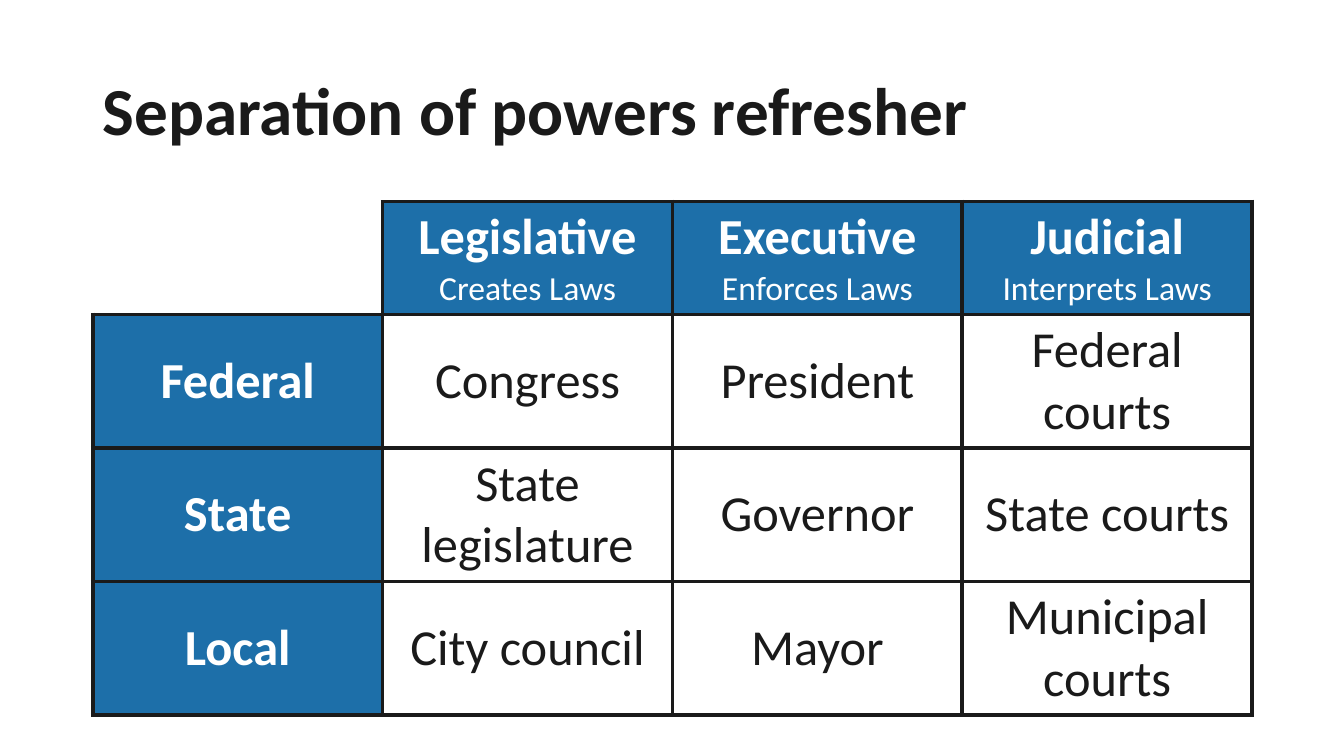
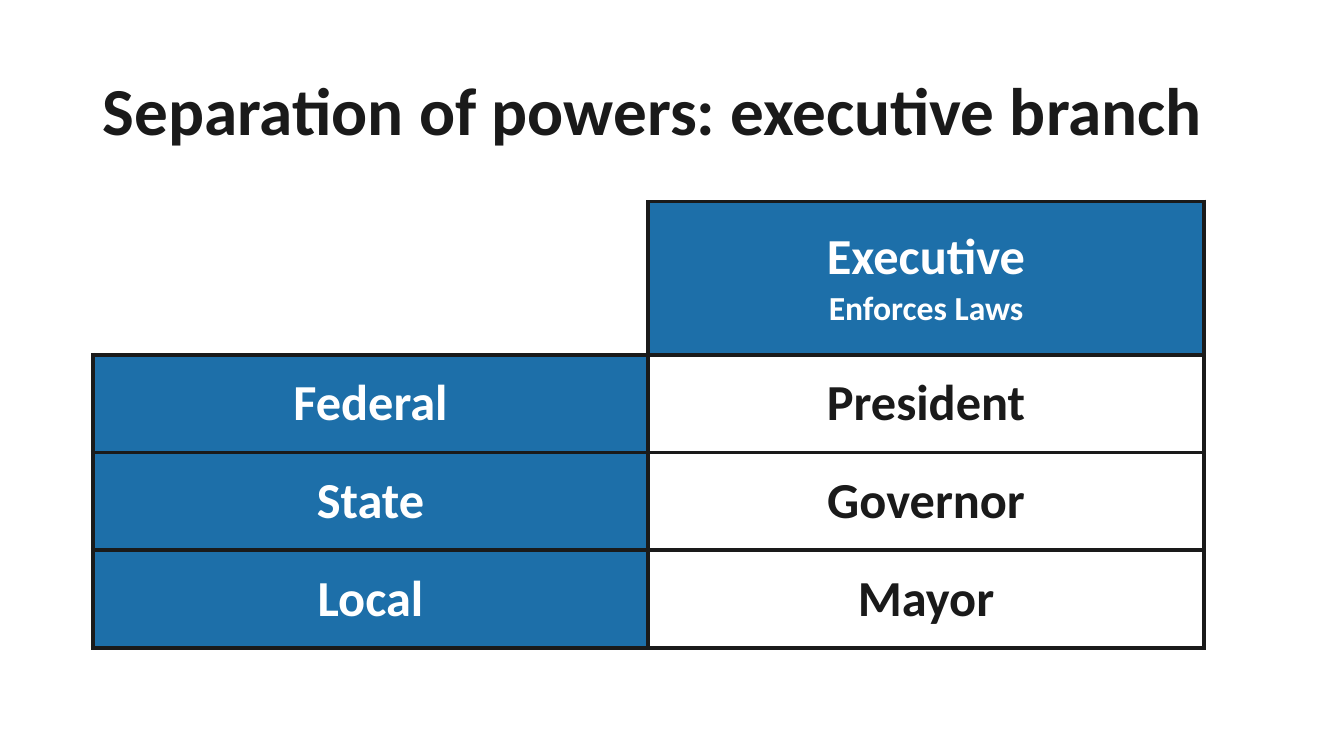
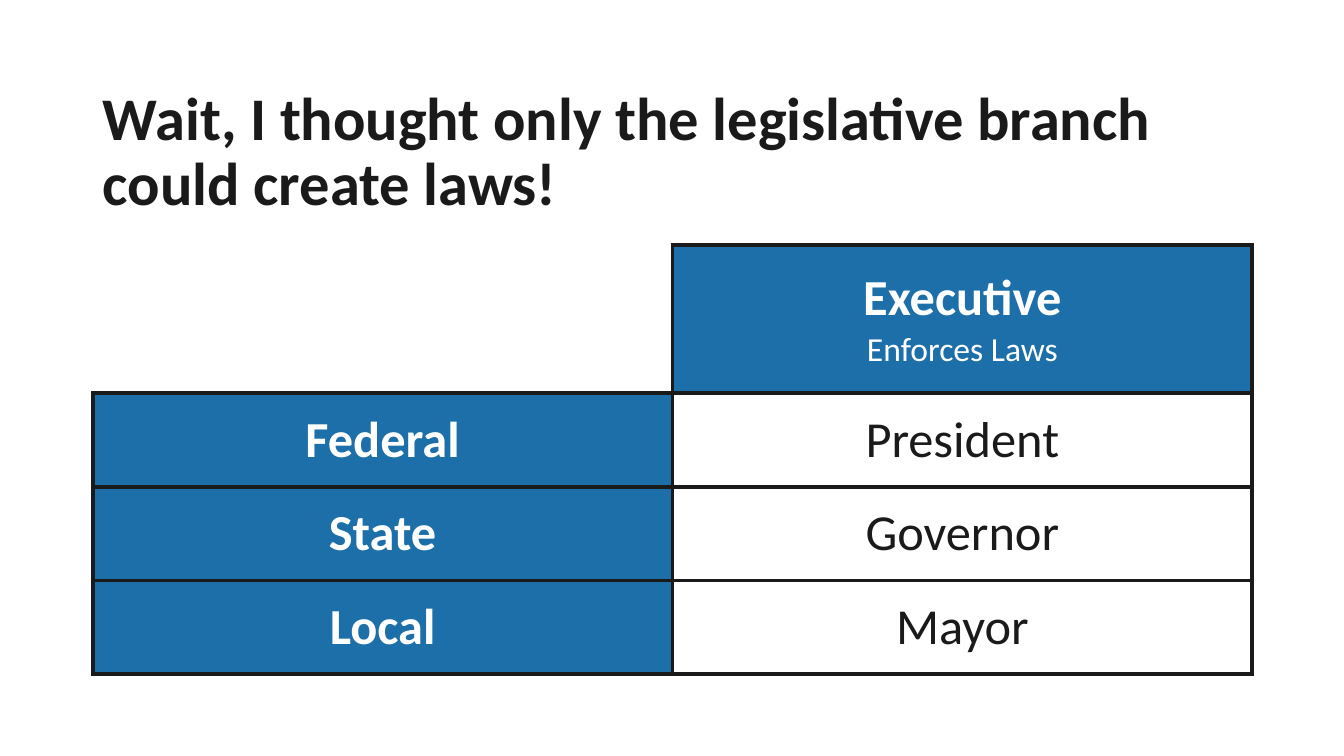
"""Build three slides on the separation of powers, each a title over a table."""
from dataclasses import dataclass

from lxml import etree
from pptx import Presentation
from pptx.dml.color import RGBColor
from pptx.enum.text import MSO_ANCHOR, MSO_AUTO_SIZE, PP_ALIGN
from pptx.oxml.ns import qn
from pptx.util import Inches, Pt

LEFT, CENTER = PP_ALIGN.LEFT, PP_ALIGN.CENTER
MIDDLE = MSO_ANCHOR.MIDDLE
FIXED = MSO_AUTO_SIZE.NONE

FONT = "Calibri"
INK, BLUE, WHITE = "1A1A1A", "1D6FA9", "FFFFFF"
EDGE = 0.92
SPAN = 11.5
HEAD_SIZE, SUB_SIZE = 36, 24
TITLE_ONLY = 5


@dataclass
class Page:
    title: str
    rows: list[list[str]]
    notes: list[str]
    size: float = 48
    title_top: float = 0.4
    top: float = 2
    width: float = SPAN
    head: float = 1.5
    row: float = 1
    bold_sub: bool = False
    bold_cell: bool = False


BRANCH = [
    ["", "Executive"],
    ["Federal", "President"],
    ["State", "Governor"],
    ["Local", "Mayor"],
]

PAGES = [
    Page(
        "Separation of powers refresher",
        [
            ["", "Legislative", "Executive", "Judicial"],
            ["Federal", "Congress", "President", "Federal courts"],
            ["State", "State legislature", "Governor", "State courts"],
            ["Local", "City council", "Mayor", "Municipal courts"],
        ],
        ["", "Creates Laws", "Enforces Laws", "Interprets Laws"],
        head=1.12, row=1.32,
    ),
    Page(
        "Separation of powers: executive branch", BRANCH, ["", "Enforces Laws"],
        width=11.02, head=1.52, row=0.97, bold_sub=True, bold_cell=True,
    ),
    Page(
        "Wait, I thought only the legislative branch could create laws!",
        BRANCH, ["", "Enforces Laws"],
        size=43.2, title_top=0.8, top=2.43, head=1.47, row=0.93,
    ),
]


def color(code: str) -> RGBColor:
    return RGBColor.from_string(code)


def add_run(para, text: str, size: float, ink: str, bold: bool) -> None:
    run = para.add_run()
    run.text = text
    font = run.font
    font.name, font.size, font.bold = FONT, Pt(size), bold
    font.color.rgb = color(ink)


def add_edge(cell, side: str, code: str, width: float) -> None:
    props = cell._tc.get_or_add_tcPr()
    line = etree.SubElement(props, qn(f"a:ln{side}"), w=str(Pt(width)))
    fill = etree.SubElement(line, qn("a:solidFill"))
    etree.SubElement(fill, qn("a:srgbClr"), val=code)


def style_cell(cell, fill: str, bare: bool) -> None:
    for side in "LRTB":
        if bare and side in "LT":
            add_edge(cell, side, WHITE, 1)
        else:
            add_edge(cell, side, INK, 3)
    cell.fill.solid()
    cell.fill.fore_color.rgb = color(fill)
    cell.vertical_anchor = MIDDLE


def add_title(slide, page: Page) -> None:
    title = slide.shapes.title
    title.left, title.top = Inches(EDGE), Inches(page.title_top)
    title.width, title.height = Inches(SPAN), Inches(1.45)
    frame = title.text_frame
    frame.auto_size, frame.vertical_anchor = FIXED, MIDDLE
    para = frame.paragraphs[0]
    para.alignment, para.line_spacing = LEFT, 0.9
    add_run(para, page.title, page.size, INK, True)


def add_grid(slide, page: Page) -> None:
    count, cols = len(page.rows), len(page.rows[0])
    tall = page.head + page.row * (count - 1)
    table = slide.shapes.add_table(
        count, cols, Inches(EDGE), Inches(page.top), Inches(page.width), Inches(tall)
    ).table
    for col in table.columns:
        col.width = Inches(page.width / cols)
    for r, words in enumerate(page.rows):
        table.rows[r].height = Inches(page.row if r else page.head)
        for c, word in enumerate(words):
            cell = table.cell(r, c)
            bare = r == c == 0
            label = not bare and (r == 0 or c == 0)
            style_cell(cell, BLUE if label else WHITE, bare)
            if bare:
                continue
            para = cell.text_frame.paragraphs[0]
            para.alignment = CENTER
            ink = WHITE if label else INK
            add_run(para, word, HEAD_SIZE, ink, label or page.bold_cell)
            if r == 0:
                para = cell.text_frame.add_paragraph()
                para.alignment = CENTER
                add_run(para, page.notes[c], SUB_SIZE, ink, page.bold_sub)


def main() -> None:
    deck = Presentation()
    deck.slide_width, deck.slide_height = Inches(13.33), Inches(7.5)
    for page in PAGES:
        slide = deck.slides.add_slide(deck.slide_layouts[TITLE_ONLY])
        add_title(slide, page)
        add_grid(slide, page)
    deck.save("out.pptx")


if __name__ == "__main__":
    main()
